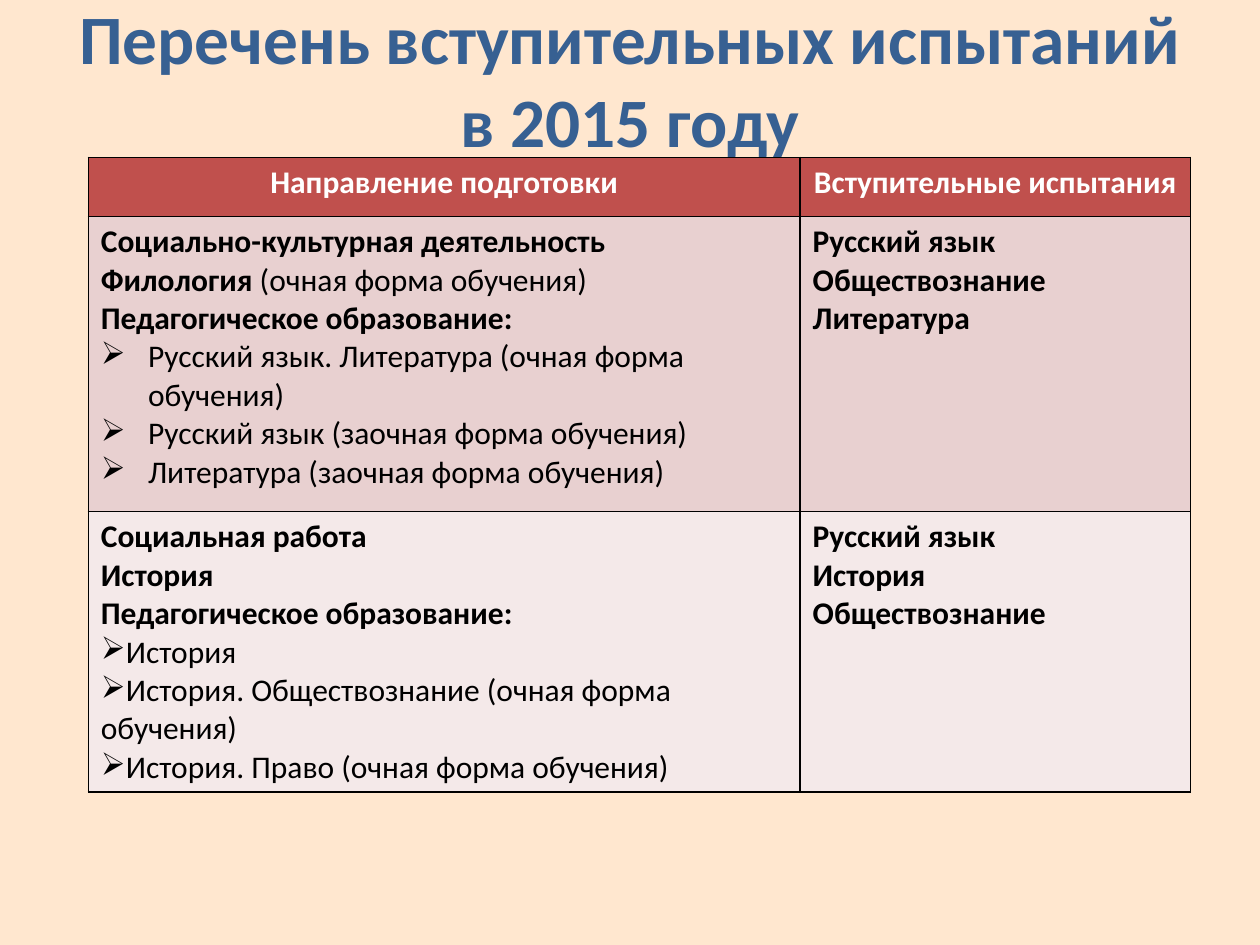
from dataclasses import dataclass

from lxml import etree
from pptx import Presentation
from pptx.dml.color import RGBColor
from pptx.enum.text import MSO_ANCHOR, PP_ALIGN
from pptx.oxml.ns import qn
from pptx.util import Cm, Pt

CENTER, LEFT = PP_ALIGN.CENTER, PP_ALIGN.LEFT
MIDDLE = MSO_ANCHOR.MIDDLE


@dataclass(frozen=True)
class Theme:
    font: str = "Calibri"
    title_size: float = 39.6
    body_size: float = 18
    border_width: float = 1
    background: str = "FFE7CF"
    title: str = "376092"
    header: str = "C0504D"
    header_text: str = "FFFFFF"
    text: str = "000000"
    bands: tuple = ("E8D0D0", "F4E9E9")


THEME = Theme()
BULLET = "➢"
HANGING, FLUSH = Cm(0.95), Cm(0)

TITLE = "Перечень вступительных испытаний в 2015 году"
HEADERS = ("Направление подготовки", "Вступительные испытания")


@dataclass(frozen=True)
class Group:
    programs: tuple  # (bold part, plain part) of each line
    profiles: tuple  # bulleted lines
    indent: int      # hanging indent of the bullets
    exams: tuple


GROUPS = (
    Group(
        programs=(
            ("Социально-культурная деятельность", ""),
            ("Филология ", "(очная форма обучения)"),
            ("Педагогическое образование:", ""),
        ),
        profiles=(
            "Русский язык. Литература (очная форма обучения)",
            "Русский язык (заочная форма обучения)",
            "Литература (заочная форма обучения)",
        ),
        indent=HANGING,
        exams=("Русский язык", "Обществознание", "Литература"),
    ),
    Group(
        programs=(
            ("Социальная работа", ""),
            ("История", ""),
            ("Педагогическое образование:", ""),
        ),
        profiles=(
            "История",
            "История. Обществознание (очная форма обучения)",
            "История. Право (очная форма обучения)",
        ),
        indent=FLUSH,
        exams=("Русский язык", "История", "Обществознание"),
    ),
)


def add_span(para, text, size, color, bold):
    span = para.add_run()
    span.text = text
    font = span.font
    font.name, font.size, font.bold = THEME.font, Pt(size), bold
    font.color.rgb = RGBColor.from_string(color)


def next_para(frame, align=LEFT):
    """Return the empty first paragraph, or a new one after the last."""
    first = frame.paragraphs[0]
    para = frame.add_paragraph() if first.runs else first
    para.alignment = align
    return para


def add_line(frame, bold_text, plain_text="", color=THEME.text, align=LEFT):
    para = next_para(frame, align)
    for text, bold in ((bold_text, True), (plain_text, False)):
        if text:
            add_span(para, text, THEME.body_size, color, bold)


def add_bullet(frame, text, indent):
    para = next_para(frame)
    props = para._p.get_or_add_pPr()
    props.set("marL", str(indent))
    props.set("indent", str(-indent))
    etree.SubElement(props, qn("a:buChar")).set("char", BULLET)
    add_span(para, text, THEME.body_size, THEME.text, False)


def style_cell(cell, color):
    """Give a cell thin borders on all sides and a solid fill."""
    props = cell._tc.get_or_add_tcPr()
    for side in ("a:lnL", "a:lnR", "a:lnT", "a:lnB"):
        line = etree.SubElement(props, qn(side), w=str(Pt(THEME.border_width)))
        fill = etree.SubElement(line, qn("a:solidFill"))
        etree.SubElement(fill, qn("a:srgbClr"), val=THEME.text)
    cell.fill.solid()
    cell.fill.fore_color.rgb = RGBColor.from_string(color)


def add_title(page, left, top, width, height):
    frame = page.shapes.add_textbox(left, top, width, height).text_frame
    frame.word_wrap = True
    frame.vertical_anchor = MIDDLE
    add_span(next_para(frame, CENTER), TITLE, THEME.title_size, THEME.title, True)


def add_exam_table(page, left, top, widths, heights):
    table = page.shapes.add_table(
        len(heights), len(widths), left, top, sum(widths), sum(heights)
    ).table
    for column, width in zip(table.columns, widths):
        column.width = width
    for row, height in zip(table.rows, heights):
        row.height = height

    # Header row
    for cell, text in zip(table.rows[0].cells, HEADERS):
        style_cell(cell, THEME.header)
        add_line(cell.text_frame, text, color=THEME.header_text, align=CENTER)

    # One row for each group of programs
    for index, (group, band) in enumerate(zip(GROUPS, THEME.bands), start=1):
        programs, exams = table.cell(index, 0), table.cell(index, 1)
        for cell in (programs, exams):
            style_cell(cell, band)
        for bold_text, plain_text in group.programs:
            add_line(programs.text_frame, bold_text, plain_text)
        for profile in group.profiles:
            add_bullet(programs.text_frame, profile, group.indent)
        for exam in group.exams:
            add_line(exams.text_frame, exam)


def main():
    deck = Presentation()
    deck.slide_width, deck.slide_height = Cm(25.4), Cm(19.05)
    page = deck.slides.add_slide(deck.slide_layouts[6])
    backdrop = page.background.fill
    backdrop.solid()
    backdrop.fore_color.rgb = RGBColor.from_string(THEME.background)

    add_title(page, Cm(1.27), Cm(0.76), Cm(22.86), Cm(1.63))
    add_exam_table(
        page, Cm(1.78), Cm(3.17),
        widths=(Cm(14.35), Cm(7.87)),
        heights=(Cm(1.19), Cm(5.95), Cm(5.66)),
    )
    deck.save("out.pptx")


if __name__ == "__main__":
    main()
